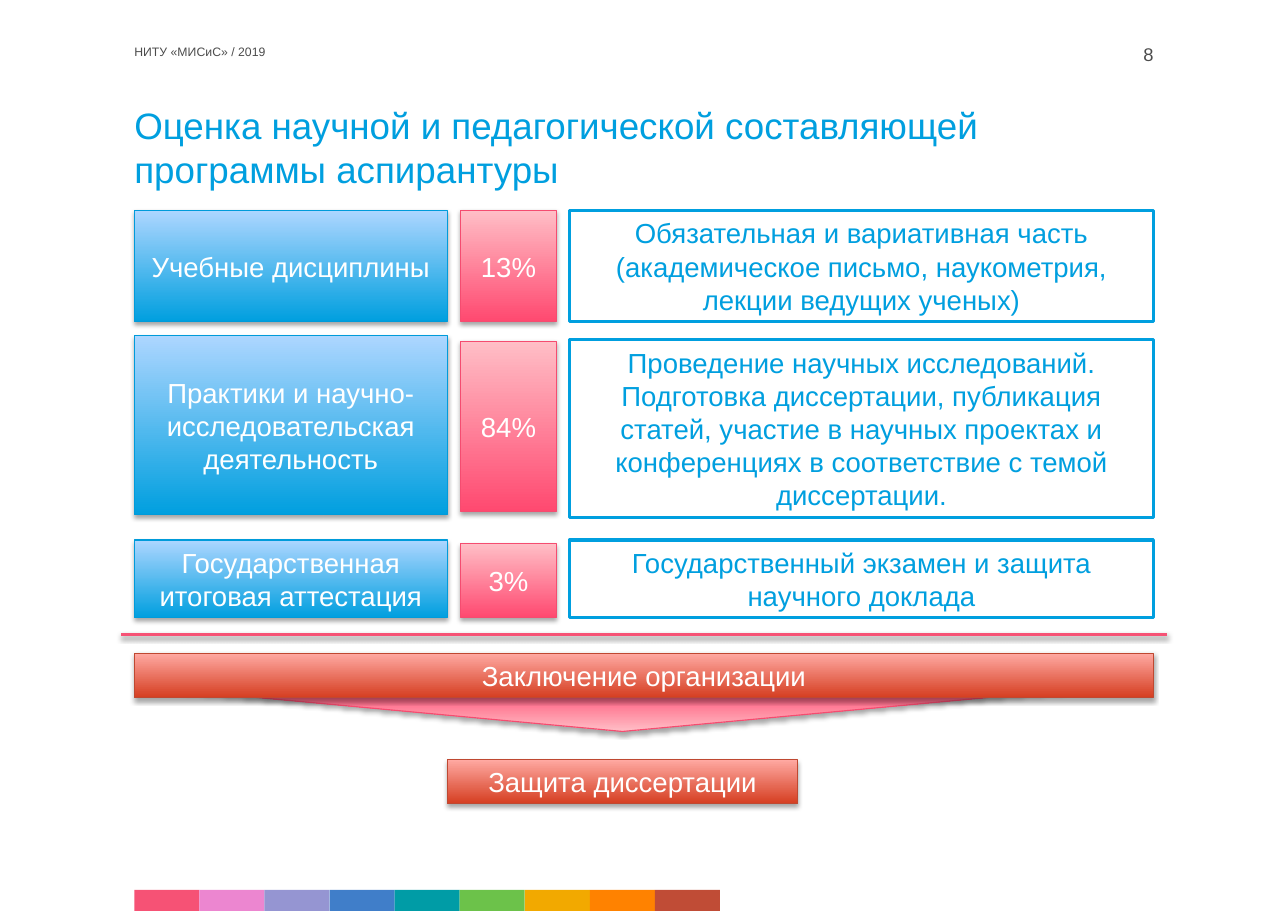
from pptx import Presentation, oxml
from pptx import util as u
from pptx.dml.color import RGBColor
from pptx.enum import shapes, text
from pptx.oxml import ns

Pt = u.Pt
RECT = shapes.MSO_SHAPE.RECTANGLE
ALIGN = text.PP_ALIGN
TOP, MID = text.MSO_ANCHOR.TOP, text.MSO_ANCHOR.MIDDLE

COLORS = {"white": "FFFFFF", "grey": "4C4C4C", "blue": "009FDF", "rose": "F65275"}

# Each style: bottom colour, top colour, outline
STYLES = {
    "blue": ("009FDF", "ADD6FF", "009BDA"),
    "pink": ("FF4970", "FFBEC6", "F54C70"),
    "red": ("D53E21", "FFA9A2", "BF4831"),
}
STRIPES = ["F65275", "EC86D0", "9595D2", "407EC9", "009CA6",
           "6CC24A", "F2A900", "FF8200", "C04C36"]

LEFT, WIDE = 87.8, 666
STAGE_W, SHARE_X, SHARE_W, NOTE_X, NOTE_W = 204.5, 301, 62.6, 372.2, 381.6

# Each row: (text, top, height) for the stage, its share and its note
ROWS = [
    (("Учебные дисциплины", 137.5, 72.7), ("13%", 137.5, 72.7),
     ("Обязательная и вариативная часть\n"
      "(академическое письмо, наукометрия, лекции ведущих ученых)", 137.5, 72.7)),
    (("Практики и научно-исследовательская деятельность", 219.6, 116.9),
     ("84%", 223.2, 111.4),
     ("Проведение научных исследований. Подготовка диссертации, публикация "
      "статей, участие в научных проектах и конференциях в соответствие с темой "
      "диссертации.", 222, 116.4)),
    (("Государственная итоговая аттестация", 353, 50.8), ("3%", 355.4, 48.4),
     ("Государственный экзамен и защита научного доклада", 353, 50.8)),
]


def rgb(code):
    return RGBColor.from_string(code)


def write(frame, words, size, color, align, anchor, inset=(0, 0)):
    frame.word_wrap = True
    frame.auto_size = text.MSO_AUTO_SIZE.NONE
    frame.vertical_anchor = anchor
    frame.margin_left = frame.margin_right = Pt(inset[0])
    frame.margin_top = frame.margin_bottom = Pt(inset[1])
    frame.text = words
    for para in frame.paragraphs:
        para.alignment = align
        para.font.name = "Arial"
        para.font.size = Pt(size)
        para.font.color.rgb = rgb(COLORS[color])


def add_shadow(shape, alpha=35):
    """Cast a soft shadow straight down."""
    shape._element.spPr.append(oxml.parse_xml(
        f'<a:effectLst {ns.nsdecls("a")}>'
        f'<a:outerShdw blurRad="{Pt(3.1)}" dist="{Pt(1.8)}" dir="5400000" rotWithShape="0">'
        f'<a:srgbClr val="000000"><a:alpha val="{alpha * 1000}"/></a:srgbClr>'
        '</a:outerShdw></a:effectLst>'))


def add_glossy(slide, kind, box, style):
    """Add a shape with a vertical gradient and a shadow."""
    shape = slide.shapes.add_shape(kind, *map(Pt, box))
    low, high, edge = STYLES[style]
    shape.fill.gradient()
    shape.fill.gradient_angle = 90
    for stop, code in zip(shape.fill.gradient_stops, (low, high)):
        stop.color.rgb = rgb(code)
    shape.line.color.rgb = rgb(edge)
    shape.line.width = Pt(0.75)
    add_shadow(shape)
    return shape


def add_block(slide, words, box, style):
    shape = add_glossy(slide, RECT, box, style)
    write(shape.text_frame, words, 18, "white", ALIGN.CENTER, MID, (7.2, 3.6))


def add_plain(slide, box, fill):
    shape = slide.shapes.add_shape(RECT, *map(Pt, box))
    shape.shadow.inherit = False
    shape.fill.solid()
    shape.fill.fore_color.rgb = rgb(fill)
    shape.line.fill.background()
    return shape


def add_note(slide, words, box):
    shape = add_plain(slide, box, COLORS["white"])
    shape.line.color.rgb = rgb(COLORS["blue"])
    shape.line.width = Pt(2)
    write(shape.text_frame, words, 18, "blue", ALIGN.CENTER, MID, (7.2, 3.6))


def add_label(slide, words, box, size, align):
    label = slide.shapes.add_textbox(*map(Pt, box))
    write(label.text_frame, words, size, "grey", align, TOP)


def set_title(slide, words):
    title = slide.shapes.title
    title.left, title.top, title.width, title.height = map(Pt, (LEFT, 67, WIDE, 70.5))
    write(title.text_frame, words, 24, "blue", ALIGN.LEFT, TOP)
    title.text_frame.paragraphs[0].line_spacing = Pt(28.8)


def add_rule(slide, x1, x2, y):
    line = slide.shapes.add_connector(
        shapes.MSO_CONNECTOR.STRAIGHT, Pt(x1), Pt(y), Pt(x2), Pt(y))
    line.line.color.rgb = rgb(COLORS["rose"])
    line.line.width = Pt(2)
    add_shadow(line, 38)


def main():
    deck = Presentation()
    deck.slide_width, deck.slide_height = Pt(841.68), Pt(595.44)
    slide = deck.slides.add_slide(deck.slide_layouts[5])

    # Header and title
    add_label(slide, "НИТУ «МИСиС» / 2019", (LEFT, 28.8, 581, 28), 8, ALIGN.LEFT)
    add_label(slide, "8", (683.3, 28.1, 70.5, 28), 12, ALIGN.RIGHT)
    set_title(slide, "Оценка научной и педагогической составляющей программы аспирантуры")

    # Colour strip at the foot
    step = 42.53
    for i, code in enumerate(STRIPES):
        add_plain(slide, (LEFT + i * step, 581.6, step, 14), code)

    # Parts of the programme
    for stage, share, note in ROWS:
        add_block(slide, stage[0], (LEFT, stage[1], STAGE_W, stage[2]), "blue")
        add_block(slide, share[0], (SHARE_X, share[1], SHARE_W, share[2]), "pink")
        add_note(slide, note[0], (NOTE_X, note[1], NOTE_W, note[2]))

    # Outcome
    add_rule(slide, 79.2, 762.5, 414.5)
    arrow = add_glossy(slide, shapes.MSO_SHAPE.ISOSCELES_TRIANGLE,
                       (97.2, 449.3, 619.2, 28.8), "pink")
    arrow.rotation = 180
    add_block(slide, "Заключение организации", (LEFT, 427, WIDE, 29), "red")
    add_block(slide, "Защита диссертации", (292.3, 496.5, 229, 29), "red")

    deck.save("out.pptx")


if __name__ == "__main__":
    main()
